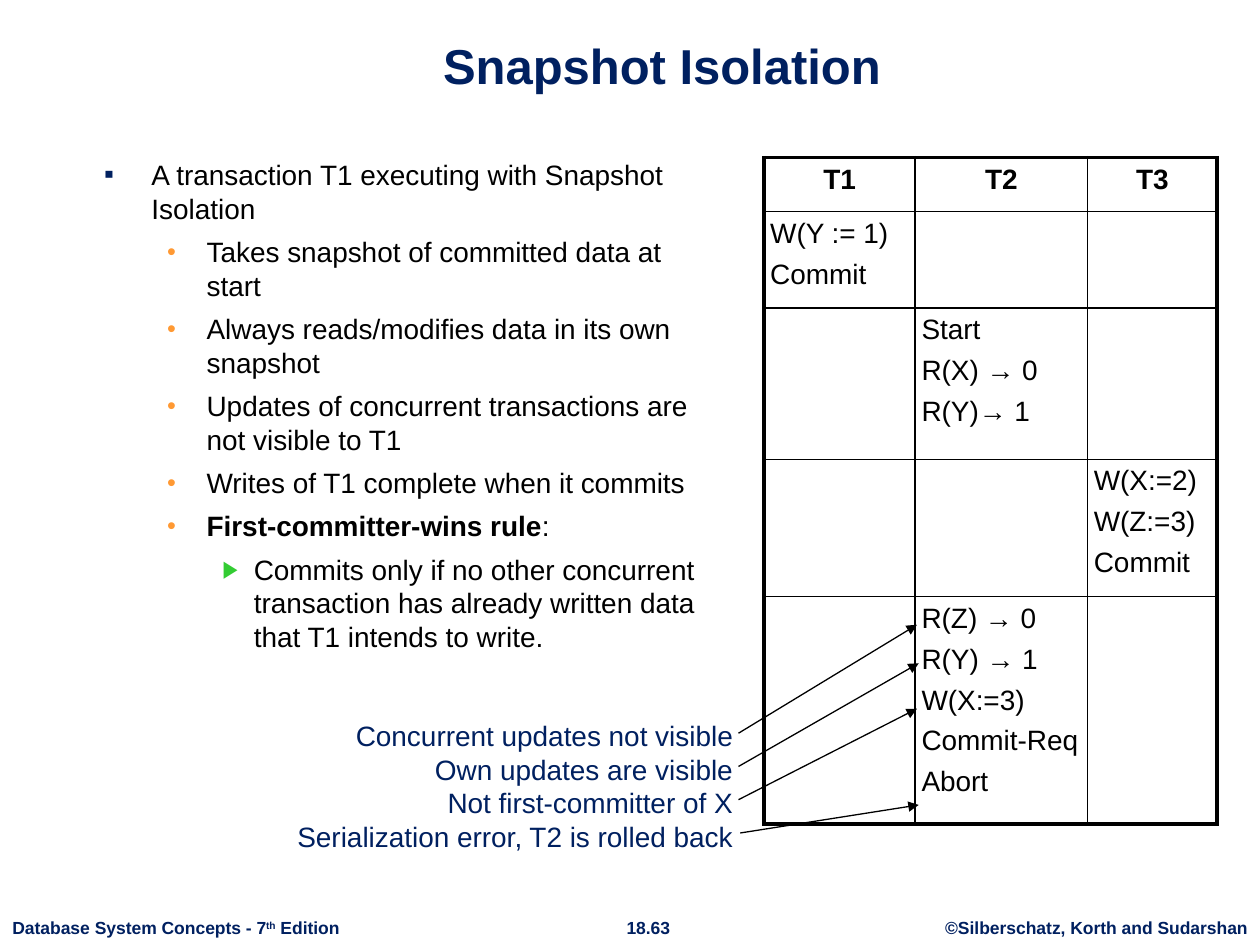
"""Build the Snapshot Isolation slide."""
from dataclasses import dataclass

from lxml import etree
from pptx import Presentation
from pptx.dml.color import RGBColor
from pptx.enum import shapes, text
from pptx.oxml import ns
from pptx.util import Pt

NAVY = RGBColor(0x00, 0x20, 0x60)
BLACK = RGBColor(0x00, 0x00, 0x00)
ORANGE = RGBColor(0xFF, 0x99, 0x33)
GREEN = RGBColor(0x33, 0xCC, 0x33)
FONT = "Arial"
LEFT, CENTER, RIGHT = text.PP_ALIGN.LEFT, text.PP_ALIGN.CENTER, text.PP_ALIGN.RIGHT
THIN, THICK = 1, 2.25
GAP = 5.6


@dataclass(frozen=True)
class Level:
    indent: float
    hang: float
    char: str
    color: RGBColor
    percent: int


@dataclass(frozen=True)
class Item:
    level: int
    words: str
    bold: str = ""


@dataclass(frozen=True)
class Arrow:
    x1: float
    y1: float
    x2: float
    y2: float


@dataclass(frozen=True)
class Footer:
    left: float
    width: float
    align: text.PP_ALIGN
    runs: tuple[str, ...]


LEVELS = (
    Level(27, 27, "▪", NAVY, 100),
    Level(58.5, 22.5, "•", ORANGE, 90),
    Level(85.5, 18, "▶", GREEN, 85),
)
ITEMS = (
    Item(0, "A transaction T1 executing with Snapshot Isolation"),
    Item(1, "Takes snapshot of committed data at start"),
    Item(1, "Always reads/modifies data in its own snapshot"),
    Item(1, "Updates of concurrent transactions are not visible to T1"),
    Item(1, "Writes of T1 complete when it commits"),
    Item(1, ":", bold="First-committer-wins rule"),
    Item(2, "Commits only if no other concurrent transaction has already "
            "written data that T1 intends to write."),
)
COLUMNS = (86.5, 98.5, 74)
ROWS = (31, 55, 86.5, 78.5, 130)
SCHEDULE = (
    (("T1",), ("T2",), ("T3",)),
    (("W(Y := 1)", "Commit"), (), ()),
    ((), ("Start", "R(X) → 0", "R(Y)→ 1"), ()),
    ((), (), ("W(X:=2)", "W(Z:=3)", "Commit")),
    ((), ("R(Z) → 0", "R(Y) → 1", "W(X:=3)", "Commit-Req", "Abort"), ()),
)
LABELS = (
    "Concurrent updates not visible",
    "Own updates are visible",
    "Not first-committer of X",
    "Serialization error, T2 is rolled back",
)
ARROWS = (
    Arrow(422, 419, 524, 357),
    Arrow(422, 438, 525, 379),
    Arrow(422, 457, 524, 405),
    Arrow(423, 476, 525, 460),
)
FOOTERS = (
    Footer(0, 202, LEFT, ("Database System Concepts - 7", "th", " Edition")),
    Footer(350, 41, CENTER, ("18.63",)),
    Footer(533, 187, CENTER, ("©Silberschatz, Korth and Sudarshan",)),
)


def add(parent, tag: str, **attrs):
    return etree.SubElement(parent, ns.qn(tag), attrs)


def style(p, size: float, color: RGBColor, align=LEFT, bold=None) -> None:
    p.alignment = align
    p.font.name, p.font.size, p.font.bold = FONT, Pt(size), bold
    p.font.color.rgb = color


def text_box(s, left: float, top: float, width: float, height: float, wrap: bool):
    tf = s.shapes.add_textbox(Pt(left), Pt(top), Pt(width), Pt(height)).text_frame
    tf.word_wrap = wrap
    return tf


def paragraphs(tf, count: int, gap: float = 0) -> list:
    for _ in range(count - 1):
        tf.add_paragraph().space_before = Pt(gap)
    return list(tf.paragraphs)


def add_bullet(p, level: Level) -> None:
    ppr = p._p.get_or_add_pPr()
    ppr.set("marL", str(Pt(level.indent)))
    ppr.set("indent", str(-Pt(level.hang)))
    add(add(ppr, "a:buClr"), "a:srgbClr", val=str(level.color))
    add(ppr, "a:buSzPct", val=str(level.percent * 1000))
    add(ppr, "a:buFont", typeface=FONT)
    add(ppr, "a:buChar", char=level.char)


def draw_title(s, words: str) -> None:
    sp = s.shapes.title
    sp.left, sp.top, sp.width, sp.height = Pt(60.5), Pt(9.5), Pt(635.5), Pt(48)
    tf = sp.text_frame
    tf.text = words
    tf.vertical_anchor = text.MSO_ANCHOR.BOTTOM
    style(tf.paragraphs[0], 28, NAVY, CENTER, True)


def draw_body(s, items: tuple[Item, ...]) -> None:
    tf = text_box(s, 52.5, 86.5, 360, 417, True)
    for p, item in zip(paragraphs(tf, len(items), GAP), items):
        p.level = item.level
        add_bullet(p, LEVELS[item.level])
        style(p, 16, BLACK)
        if item.bold:
            r = p.add_run()
            r.text, r.font.bold = item.bold, True
        p.add_run().text = item.words


def set_borders(cell, row: int, col: int) -> None:
    outer = {"L": col == 0, "R": col == len(COLUMNS) - 1,
             "T": row == 0, "B": row == len(ROWS) - 1}
    tcpr = cell._tc.get_or_add_tcPr()
    for side, thick in outer.items():
        ln = add(tcpr, f"a:ln{side}", w=str(Pt(THICK if thick else THIN)))
        add(add(ln, "a:solidFill"), "a:srgbClr", val=str(BLACK))


def draw_schedule(s) -> None:
    table = s.shapes.add_table(len(ROWS), len(COLUMNS), Pt(436.5), Pt(90),
                               Pt(sum(COLUMNS)), Pt(sum(ROWS))).table
    table.first_row = table.horz_banding = False
    for column, width in zip(table.columns, COLUMNS):
        column.width = Pt(width)
    for i, (row, height) in enumerate(zip(table.rows, ROWS)):
        row.height = Pt(height)
        for j, (cell, lines) in enumerate(zip(row.cells, SCHEDULE[i])):
            cell.margin_left = cell.margin_right = Pt(3.6)
            cell.margin_top = cell.margin_bottom = Pt(3.6)
            set_borders(cell, i, j)
            cell.fill.background()
            for p, line in zip(paragraphs(cell.text_frame, len(lines), GAP), lines):
                p.text = line
                style(p, 16, BLACK, LEFT if i else CENTER, i == 0)


def draw_labels(s, labels: tuple[str, ...]) -> None:
    tf = text_box(s, 161.5, 407, 264.5, 84, False)
    for p, label in zip(paragraphs(tf, len(labels)), labels):
        p.text = label
        style(p, 16, NAVY, RIGHT)


def draw_arrow(s, arrow: Arrow) -> None:
    line = s.shapes.add_connector(shapes.MSO_CONNECTOR.STRAIGHT, Pt(arrow.x1),
                                  Pt(arrow.y1), Pt(arrow.x2), Pt(arrow.y2))
    line.line.color.rgb, line.line.width = BLACK, Pt(0.75)
    add(line.line._get_or_add_ln(), "a:tailEnd", type="triangle")
    add(line._element.spPr, "a:effectLst")


def draw_footer(s, footer: Footer) -> None:
    p = text_box(s, footer.left, 520.5, footer.width, 19.5, False).paragraphs[0]
    style(p, 10, NAVY, footer.align, True)
    for words in footer.runs:
        r = p.add_run()
        r.text = words
        if words == "th":
            r.font._element.set("baseline", "30000")


def main() -> None:
    prs = Presentation()
    prs.slide_width, prs.slide_height = Pt(720), Pt(540)
    s = prs.slides.add_slide(prs.slide_layouts[5])
    for footer in FOOTERS:
        draw_footer(s, footer)
    draw_title(s, "Snapshot Isolation")
    draw_body(s, ITEMS)
    draw_schedule(s)
    draw_labels(s, LABELS)
    for arrow in ARROWS:
        draw_arrow(s, arrow)
    prs.save("out.pptx")


if __name__ == "__main__":
    main()
